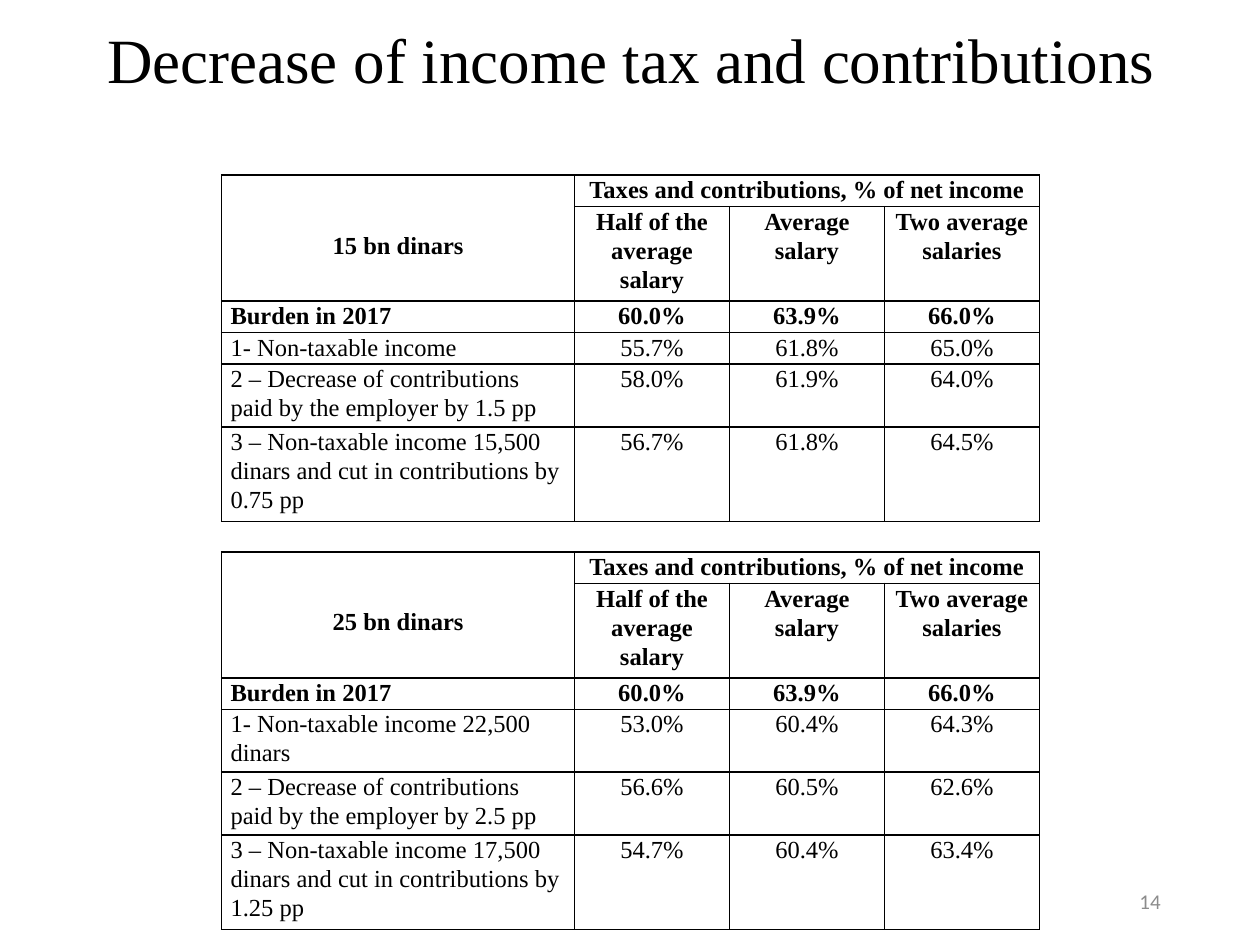
"""Build a slide with two tables comparing cuts in income tax and contributions."""
import lxml.etree
import pptx
import pptx.dml.color
import pptx.enum.text
import pptx.oxml.ns
import pptx.util

Inches = pptx.util.Inches
Pt = pptx.util.Pt
ALIGN = pptx.enum.text.PP_ALIGN
BLACK = pptx.dml.color.RGBColor(0x00, 0x00, 0x00)
GREY = pptx.dml.color.RGBColor(0x8C, 0x8C, 0x8C)
SERIF = "Times New Roman"
SANS = "Calibri"

TABLE_LEFT = 1.76
COLUMN_WIDTHS = [2.8, 1.23, 1.23, 1.23]
LINE_HEIGHT = 0.23
LABEL_DROP = 0.44
GROUP_HEADING = "Taxes and contributions, % of net income"
SALARY_LEVELS = ["Half of the average salary", "Average salary", "Two average salaries"]
BURDEN = ["Burden in 2017", "60.0%", "63.9%", "66.0%"]

CUT_15_BN = [
    ["1- Non-taxable income", "55.7%", "61.8%", "65.0%"],
    ["2 – Decrease of contributions paid by the employer by 1.5 pp", "58.0%", "61.9%", "64.0%"],
    ["3 – Non-taxable income 15,500 dinars and cut in contributions by 0.75 pp",
     "56.7%", "61.8%", "64.5%"],
]
CUT_25_BN = [
    ["1- Non-taxable income 22,500 dinars", "53.0%", "60.4%", "64.3%"],
    ["2 – Decrease of contributions paid by the employer by 2.5 pp", "56.6%", "60.5%", "62.6%"],
    ["3 – Non-taxable income 17,500 dinars and cut in contributions by 1.25 pp",
     "54.7%", "60.4%", "63.4%"],
]


def write_text(frame, text, size, font, color, align, spacing, bold=False):
    """Write one formatted run into the first paragraph of a text frame."""
    paragraph = frame.paragraphs[0]
    paragraph.alignment = align
    paragraph.line_spacing = spacing
    run = paragraph.add_run()
    run.text = text
    run.font.size = Pt(size)
    run.font.name = font
    run.font.bold = bold
    run.font.color.rgb = color


def add_label(slide, box, text, size, font, color, align, spacing=1.0):
    """Add a vertically centred text box."""
    frame = slide.shapes.add_textbox(*map(Inches, box)).text_frame
    frame.word_wrap = True
    frame.vertical_anchor = pptx.enum.text.MSO_ANCHOR.MIDDLE
    write_text(frame, text, size, font, color, align, spacing)


def draw_borders(cell):
    """Give a cell a one-point black line on every side, ahead of its fill."""
    properties = cell._tc.get_or_add_tcPr()
    qn = pptx.oxml.ns.qn
    for position, side in enumerate(["a:lnL", "a:lnR", "a:lnT", "a:lnB"]):
        line = lxml.etree.Element(qn(side), w=str(Pt(1)))
        fill = lxml.etree.SubElement(line, qn("a:solidFill"))
        lxml.etree.SubElement(fill, qn("a:srgbClr"), val=str(BLACK))
        properties.insert(position, line)


def fill_cell(cell, text, align, bold):
    """Write the text of a table cell."""
    write_text(cell.text_frame, text, 14, SERIF, BLACK, align, 1.07, bold)


def add_burden_table(slide, top, budget, measures, line_counts):
    """Add the table of tax burdens for one budget cost."""
    heights = [LINE_HEIGHT * count for count in line_counts]
    table = slide.shapes.add_table(
        len(heights), len(COLUMN_WIDTHS), Inches(TABLE_LEFT), Inches(top),
        Inches(sum(COLUMN_WIDTHS)), Inches(sum(heights))).table
    table.first_row = False
    table.horz_banding = False
    for column, width in zip(table.columns, COLUMN_WIDTHS):
        column.width = Inches(width)
    for row, height in zip(table.rows, heights):
        row.height = Inches(height)
    for cell in table.iter_cells():
        cell.margin_left = cell.margin_right = Inches(0.07)
        cell.margin_top = cell.margin_bottom = 0
        cell.fill.background()
        draw_borders(cell)

    budget_cell = table.cell(0, 0)
    budget_cell.merge(table.cell(1, 0))
    budget_cell.margin_top = Inches(LABEL_DROP)
    fill_cell(budget_cell, budget, ALIGN.CENTER, True)
    table.cell(0, 1).merge(table.cell(0, 3))
    fill_cell(table.cell(0, 1), GROUP_HEADING, ALIGN.CENTER, True)
    for column, level in enumerate(SALARY_LEVELS, start=1):
        fill_cell(table.cell(1, column), level, ALIGN.CENTER, True)
    for row, values in enumerate([BURDEN, *measures], start=2):
        for column, value in enumerate(values):
            align = ALIGN.CENTER if column else ALIGN.LEFT
            fill_cell(table.cell(row, column), value, align, values is BURDEN)


def main():
    """Build and save the slide."""
    deck = pptx.Presentation()
    deck.slide_width, deck.slide_height = Inches(10), Inches(7.5)
    slide = deck.slides.add_slide(deck.slide_layouts[6])
    add_label(slide, (0.7, 0.1, 8.62, 0.8), "Decrease of income tax and contributions",
              36, SERIF, BLACK, ALIGN.CENTER, 0.9)
    add_label(slide, (7.06, 6.95, 2.25, 0.4), "14", 12, SANS, GREY, ALIGN.RIGHT)
    add_burden_table(slide, 1.39, "15 bn dinars", CUT_15_BN, [1, 3, 1, 1, 2, 3])
    add_burden_table(slide, 4.38, "25 bn dinars", CUT_25_BN, [1, 3, 1, 2, 2, 3])
    deck.save("out.pptx")


if __name__ == "__main__":
    main()
